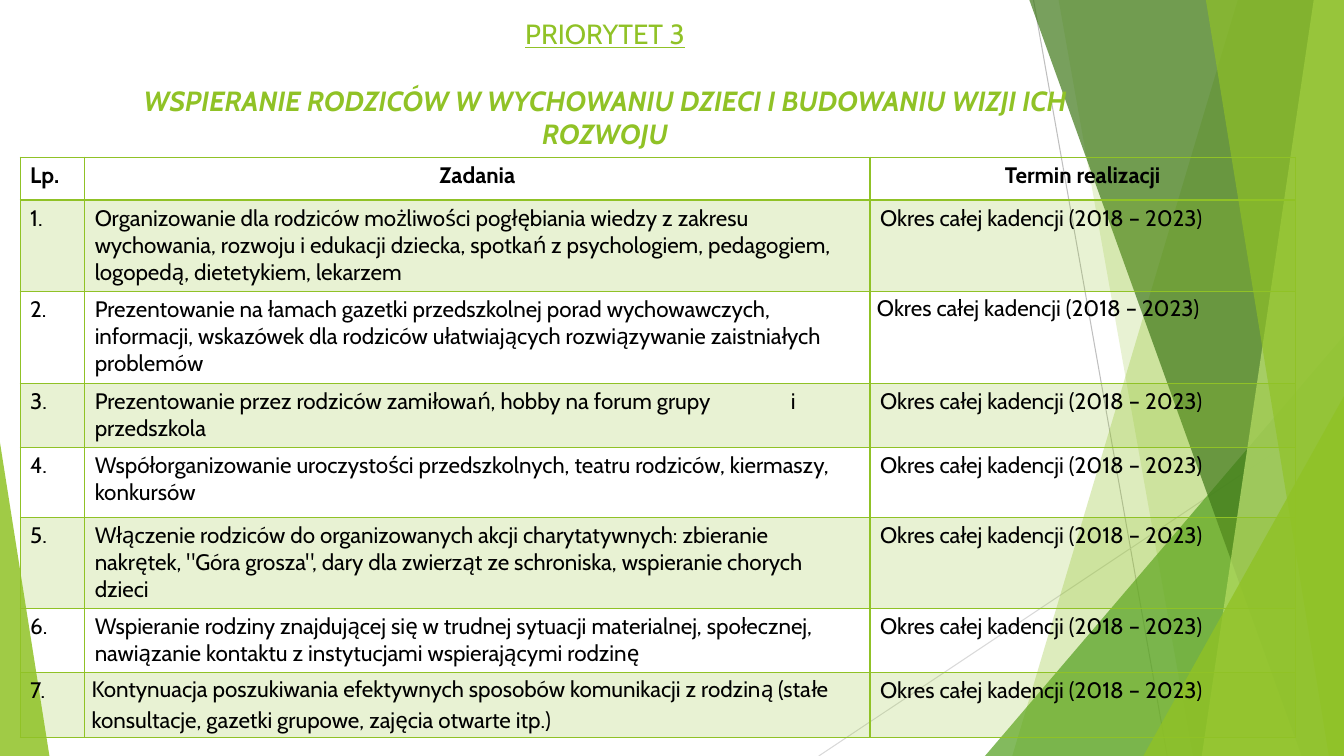
from dataclasses import dataclass

from lxml import etree
from pptx import Presentation
from pptx import util as u
from pptx.dml.color import RGBColor
from pptx.enum import shapes, text
from pptx.oxml.ns import qn


@dataclass(frozen=True)
class Theme:
    font: str = "Cabin"
    lime: str = "90C226"
    green: str = "54A021"
    dark: str = "3F7819"
    pale: str = "C0E474"
    grey: str = "BFBFBF"
    mist: str = "D9D9D9"
    ink: str = "000000"
    head: float = 19.8
    body: float = 16


T = Theme()
WIDE, HIGH = u.Inches(13.33), u.Inches(7.5)
MID = text.PP_ALIGN.CENTER
TERM = "Okres całej kadencji (2018 – 2023)"
COLS = [4.8, 58.43, 31.65]
# Task text and row height in percent of the slide
TASKS = [
    ("Organizowanie dla rodziców możliwości pogłębiania wiedzy z zakresu wychowania, "
     "rozwoju i edukacji dziecka, spotkań z psychologiem, pedagogiem, logopedą, "
     "dietetykiem, lekarzem", 12.04),
    ("Prezentowanie na łamach gazetki przedszkolnej porad wychowawczych, informacji, "
     "wskazówek dla rodziców ułatwiających rozwiązywanie zaistniałych problemów", 12.17),
    ("Prezentowanie przez rodziców zamiłowań, hobby na forum grupy\ti przedszkola", 8.47),
    ("Współorganizowanie uroczystości przedszkolnych, teatru rodziców, kiermaszy, "
     "konkursów", 9.26),
    ("Włączenie rodziców do organizowanych akcji charytatywnych: zbieranie nakrętek, "
     "\"Góra grosza\", dary dla zwierząt ze schroniska, wspieranie chorych dzieci", 12.04),
    ("Wspieranie rodziny znajdującej się w trudnej sytuacji materialnej, społecznej, "
     "nawiązanie kontaktu z instytucjami wspierającymi rodzinę", 8.47),
    ("Kontynuacja poszukiwania efektywnych sposobów komunikacji z rodziną (stałe "
     "konsultacje, gazetki grupowe, zajęcia otwarte itp.)", 8.6),
]
LOOSE = {(2, 2), (7, 1)}  # cells with wider line spacing


def x(share):
    return round(WIDE * share / 100)


def y(share):
    return round(HIGH * share / 100)


def tint(fill, color, alpha):
    """Solid fill with an opacity in percent."""
    fill.solid()
    fill.fore_color.rgb = RGBColor.from_string(color)
    for node in fill._xPr.iter(qn("a:srgbClr")):
        etree.SubElement(node, qn("a:alpha"), val=str(alpha * 1000))


def write(par, words, size=T.body, color=T.ink, align=None, bold=False,
          italic=False, under=False, before=None, after=None, space=None, tab=None):
    par.alignment = align
    par.space_before, par.space_after = before, after
    par.line_spacing = space
    if tab:
        stops = etree.SubElement(par._p.get_or_add_pPr(), qn("a:tabLst"))
        etree.SubElement(stops, qn("a:tab"), pos=str(tab), algn="l")
    run = par.add_run()
    run.text = words
    font = run.font
    font.name, font.size = T.font, u.Pt(size)
    font.bold, font.italic, font.underline = bold, italic, under
    font.color.rgb = RGBColor.from_string(color)


def finish(shape, color, alpha):
    shape.shadow.inherit = False
    shape.line.fill.background()
    tint(shape.fill, color, alpha)


def ray(slide, start, end, color):
    line = slide.shapes.add_connector(
        shapes.MSO_CONNECTOR.STRAIGHT, x(start[0]), y(start[1]), x(end[0]), y(end[1]))
    line.line.color.rgb = RGBColor.from_string(color)
    line.line.width = u.Pt(0.75)
    etree.SubElement(line._element.spPr, qn("a:effectLst"))


def band(slide, top, foot, color, alpha):
    """Full-height panel from a slanted left edge to the right slide edge."""
    pen = slide.shapes.build_freeform(x(top), 0)
    pen.add_line_segments([(WIDE, 0), (WIDE, HIGH), (x(foot), HIGH)], close=True)
    finish(pen.convert_to_shape(), color, alpha)


def wedge(slide, left, top, width, tip, color, alpha):
    """Right triangle standing on the bottom slide edge."""
    shape = slide.shapes.add_shape(
        shapes.MSO_SHAPE.ISOSCELES_TRIANGLE, x(left), y(top), x(width), y(100 - top))
    shape.adjustments[0] = tip
    finish(shape, color, alpha)


def backdrop(slide):
    ray(slide, (76.9, 0), (86.85, 100), T.grey)
    ray(slide, (100, 53.73), (60.92, 100), T.mist)
    band(slide, 92.1, 75.32, T.lime, 30)
    band(slide, 78.77, 88.75, T.lime, 20)
    wedge(slide, 73.29, 44.4, 26.71, 1, T.green, 72)
    band(slide, 76.59, 96.85, T.dark, 70)
    band(slide, 97.75, 89.42, T.pale, 70)
    band(slide, 89.72, 98.87, T.lime, 65)
    wedge(slide, 85.07, 52.4, 14.93, 1, T.lime, 80)
    wedge(slide, 0, 58.53, 3.68, 0, T.lime, 85)


def title(slide):
    frame = slide.shapes.add_textbox(x(7.13), y(1.6), x(75.77), y(18.4)).text_frame
    frame.word_wrap = True
    look = dict(size=T.head, color=T.lime, align=MID)
    write(frame.paragraphs[0], "PRIORYTET 3", under=True, **look)
    write(frame.add_paragraph(),
          "WSPIERANIE RODZICÓW W WYCHOWANIU DZIECI I BUDOWANIU WIZJI ICH ROZWOJU",
          bold=True, italic=True, before=u.Pt(23.6), **look)


def edge(cell, sides):
    """Draw the cell borders; sides maps a side letter to points."""
    props = cell._tc.get_or_add_tcPr()
    for side, width in sides.items():
        line = etree.SubElement(props, qn("a:ln" + side), w=str(u.Pt(width)))
        paint = etree.SubElement(line, qn("a:solidFill"))
        etree.SubElement(paint, qn("a:srgbClr"), val=T.lime)


def plan(slide):
    rows = [("Lp.", "Zadania", "Termin realizacji")]
    rows += [(f"{n}.", task, TERM) for n, (task, _) in enumerate(TASKS, 1)]
    highs = [5.69] + [high for _, high in TASKS]
    table = slide.shapes.add_table(
        len(rows), len(COLS), x(1.5), y(20.8), x(sum(COLS)), y(sum(highs))).table
    table.first_row = table.horz_banding = False
    for col, share in zip(table.columns, COLS):
        col.width = x(share)
    for r, (row, high) in enumerate(zip(rows, highs)):
        table.rows[r].height = y(high)
        for c, words in enumerate(row):
            cell = table.cell(r, c)
            edge(cell, {"L": 1, "R": 1, "T": 2 if r == 1 else 1, "B": 1 if r else 2})
            if r % 2:
                tint(cell.fill, T.lime, 20)
            else:
                cell.fill.background()
            look = dict(bold=r == 0, align=MID if r == 0 and c else None)
            if (r, c) in LOOSE:
                cell.margin_left = cell.margin_right = u.Inches(0.07)
                cell.margin_top = cell.margin_bottom = 0
                look.update(space=1.15, after=u.Pt(6))
            if "\t" in words:
                look.update(tab=x(51.8))
            write(cell.text_frame.paragraphs[0], words, **look)


def main():
    deck = Presentation()
    deck.slide_width, deck.slide_height = WIDE, HIGH
    slide = deck.slides.add_slide(deck.slide_layouts[6])
    backdrop(slide)
    title(slide)
    plan(slide)
    deck.save("out.pptx")


if __name__ == "__main__":
    main()
